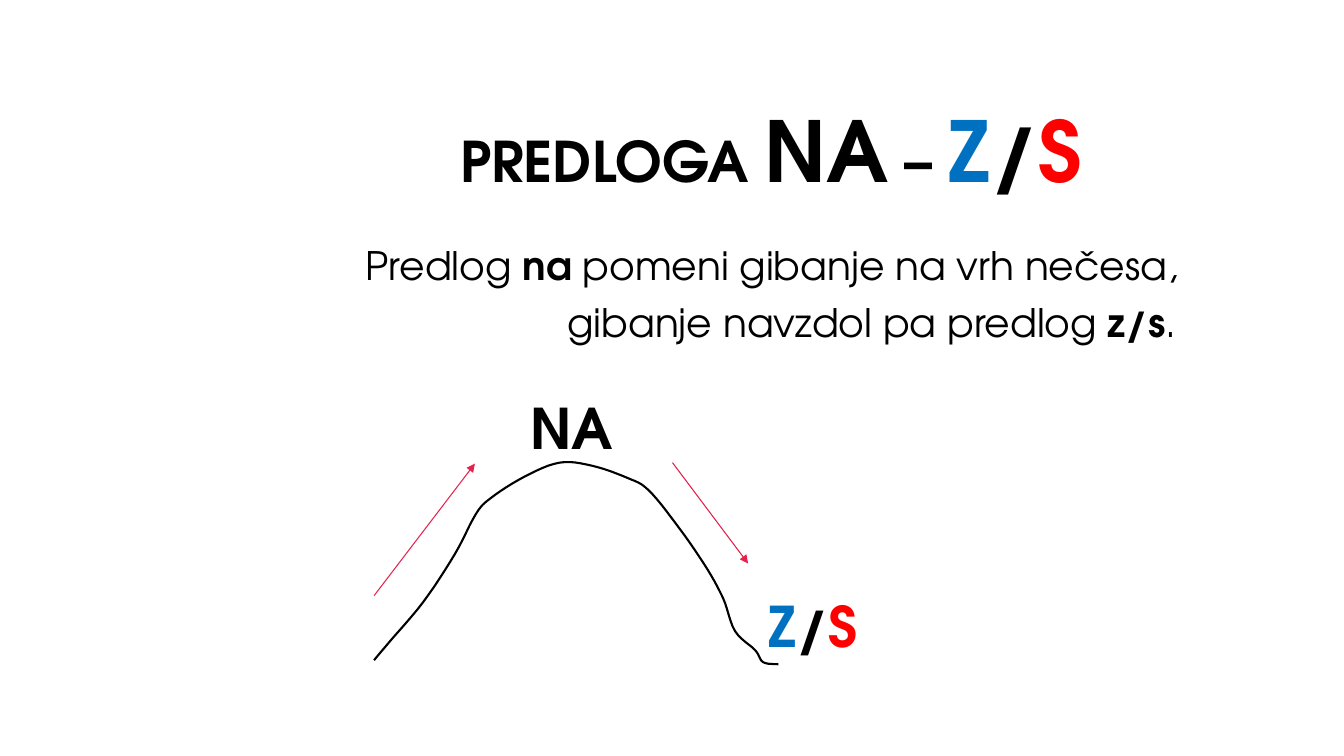
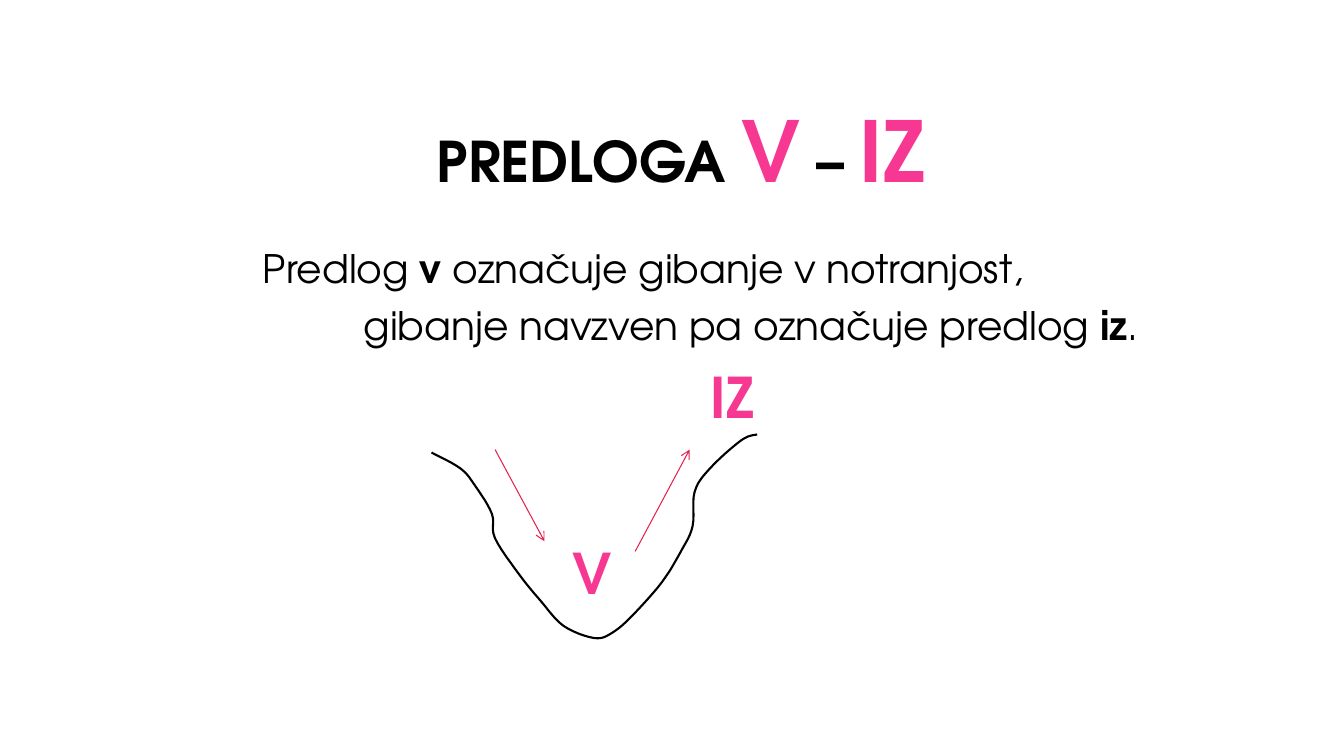
"""Build two slides on Slovene prepositions of motion."""
from lxml.etree import SubElement
from pptx import Presentation
from pptx.dml.color import RGBColor
from pptx.enum.shapes import MSO_CONNECTOR
from pptx.enum.text import MSO_ANCHOR, PP_ALIGN
from pptx.oxml.ns import qn
from pptx.util import Inches, Pt

FONT = "TeX Gyre Adventor"
COLORS = {"ink": "000000", "blue": "0070C0", "red": "FF0000", "pink": "F63892", "arrow": "E5224E"}
BODY, MEDIUM, LARGE = 28, 40, 60
UNITS_PER_INCH = 1000
CURVE_STEPS = 6

Z_OR_S = [("Z", "blue"), ("/", "ink"), ("S", "red")]

SLIDES = [
    {
        "title": [("PREDLOGA ", MEDIUM, "ink"), ("NA", LARGE, "ink"), (" – ", MEDIUM, "ink")]
        + [(text, LARGE, color) for text, color in Z_OR_S],
        "title_width": 7.66,
        "title_align": PP_ALIGN.RIGHT,
        "rule_box": (3.53, 2.4, 9.05, 4.4),
        "rule": [
            (0, [("Predlog ", False), ("na", True), (" pomeni gibanje na vrh nečesa,", False)]),
            (2, [("gibanje navzdol pa predlog ", False), ("z/s", True), (".", False)]),
        ],
        "labels": [
            ((5.16, 3.86, 1.69, 0.77), [("NA", "ink")]),
            ((7.52, 5.82, 1.54, 0.77), Z_OR_S),
        ],
        "arrows": [((3.71, 5.91), (4.71, 4.6)), ((6.67, 4.59), (7.42, 5.59))],
        "arrowhead": "triangle",
        "outline": [
            (3.71, 6.55), (3.87, 6.36), (4.2, 5.97), (4.51, 5.5), (4.72, 5.1), (4.87, 4.94),
            (5.2, 4.73), (5.55, 4.59), (5.87, 4.62), (6.22, 4.74), (6.43, 4.86), (6.7, 5.19),
            (6.98, 5.59), (7.17, 5.93), (7.29, 6.26), (7.49, 6.45), (7.57, 6.57), (7.72, 6.59),
        ],
    },
    {
        "title": [("PREDLOGA ", MEDIUM, "ink"), ("V", LARGE, "pink"), (" – ", MEDIUM, "ink"),
                  ("IZ", LARGE, "pink")],
        "title_width": 7.17,
        "title_align": PP_ALIGN.CENTER,
        "rule_box": (2.51, 2.43, 10.08, 4.23),
        "rule": [
            (0, [("Predlog ", False), ("v", True), (" označuje gibanje v notranjost,", False)]),
            (1, [("gibanje navzven pa označuje predlog ", False), ("iz", True), (".", False)]),
        ],
        "labels": [
            ((5.58, 5.29, 0.6, 0.77), [("V", "pink")]),
            ((6.95, 3.55, 1.23, 0.77), [("IZ", "pink")]),
        ],
        "arrows": [((4.91, 4.46), (5.4, 5.37)), ((6.3, 5.47), (6.84, 4.46))],
        "arrowhead": "arrow",
        "outline": [
            (4.28, 4.49), (4.57, 4.65), (4.72, 4.83), (4.88, 5.1), (4.91, 5.34), (5.15, 5.7),
            (5.37, 5.97), (5.59, 6.21), (5.89, 6.33), (6.07, 6.28), (6.28, 6.1), (6.57, 5.77),
            (6.76, 5.46), (6.87, 5.22), (6.89, 4.88), (7.04, 4.65), (7.35, 4.37), (7.51, 4.31),
        ],
    },
]


def paint(colored, name):
    colored.rgb = RGBColor.from_string(COLORS[name])


def add_text_frame(slide, box, anchor=MSO_ANCHOR.TOP):
    frame = slide.shapes.add_textbox(*map(Inches, box)).text_frame
    frame.word_wrap = True
    frame.vertical_anchor = anchor
    return frame


def add_run(paragraph, text, size, color="ink", bold=True):
    run = paragraph.add_run()
    run.text = text
    run.font.name = FONT
    run.font.size = Pt(size)
    run.font.bold = bold
    paint(run.font.color, color)


def add_title(slide, content):
    frame = add_text_frame(slide, (3.17, 0.84, content["title_width"], 1.41), MSO_ANCHOR.MIDDLE)
    heading = frame.paragraphs[0]
    heading.alignment = content["title_align"]
    heading.line_spacing = 0.9
    for text, size, color in content["title"]:
        add_run(heading, text, size, color)


def add_rule(slide, content):
    frame = add_text_frame(slide, content["rule_box"])
    for index, (indent, parts) in enumerate(content["rule"]):
        sentence = frame.add_paragraph() if index else frame.paragraphs[0]
        sentence.line_spacing = 0.9
        sentence.space_before = Pt(10 if index else 0)
        sentence._p.get_or_add_pPr().set("marL", str(Inches(indent)))
        for text, bold in parts:
            add_run(sentence, text, BODY, bold=bold)


def spline(a, b, c, d, t):
    return b + t / 2 * (c - a + t * (2 * a - 5 * b + 4 * c - d + t * (3 * (b - c) + d - a)))


def smooth_curve(knots):
    padded = [knots[0], *knots, knots[-1]]
    curve = [
        tuple(spline(*axis, step / CURVE_STEPS) for axis in zip(*padded[start:start + 4]))
        for start in range(len(knots) - 1)
        for step in range(CURVE_STEPS)
    ]
    return [(x * UNITS_PER_INCH, y * UNITS_PER_INCH) for x, y in [*curve, knots[-1]]]


def add_outline(slide, knots):
    first, *others = smooth_curve(knots)
    builder = slide.shapes.build_freeform(*first, scale=Inches(1) / UNITS_PER_INCH)
    builder.add_line_segments(others, close=False)
    outline = builder.convert_to_shape()
    outline.shadow.inherit = False
    outline.fill.background()
    outline.line.width = Pt(1.5)
    paint(outline.line.color, "ink")


def add_arrow(slide, start, end, head):
    arrow = slide.shapes.add_connector(MSO_CONNECTOR.STRAIGHT, *map(Inches, start + end))
    arrow.line.width = Pt(0.75)
    paint(arrow.line.color, "arrow")
    SubElement(arrow.line._get_or_add_ln(), qn("a:tailEnd"), type=head)
    SubElement(arrow._element.spPr, qn("a:effectLst"))


def main():
    deck = Presentation()
    deck.slide_width, deck.slide_height = Inches(13.33), Inches(7.5)
    for content in SLIDES:
        slide = deck.slides.add_slide(deck.slide_layouts[6])
        add_title(slide, content)
        add_rule(slide, content)
        add_outline(slide, content["outline"])
        for start, end in content["arrows"]:
            add_arrow(slide, start, end, content["arrowhead"])
        for box, parts in content["labels"]:
            label = add_text_frame(slide, box).paragraphs[0]
            for text, color in parts:
                add_run(label, text, MEDIUM, color)
    deck.save("out.pptx")


if __name__ == "__main__":
    main()
